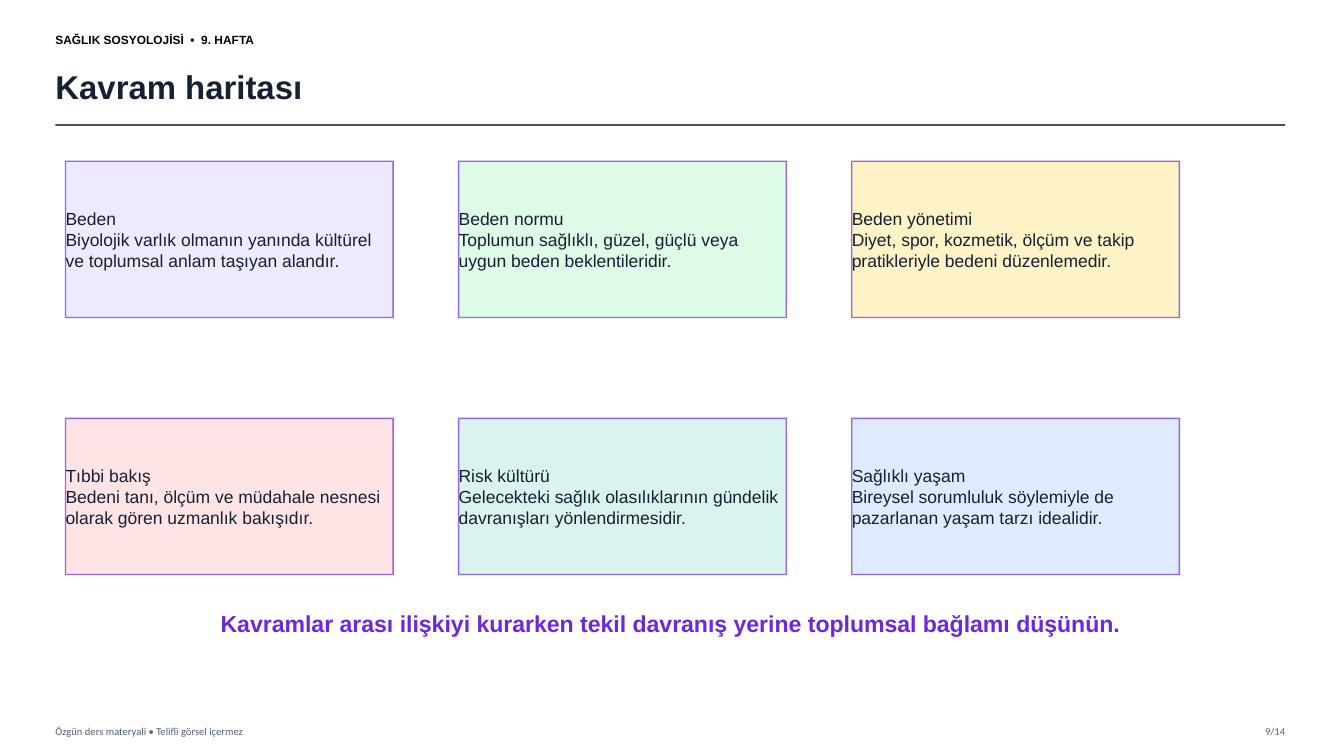
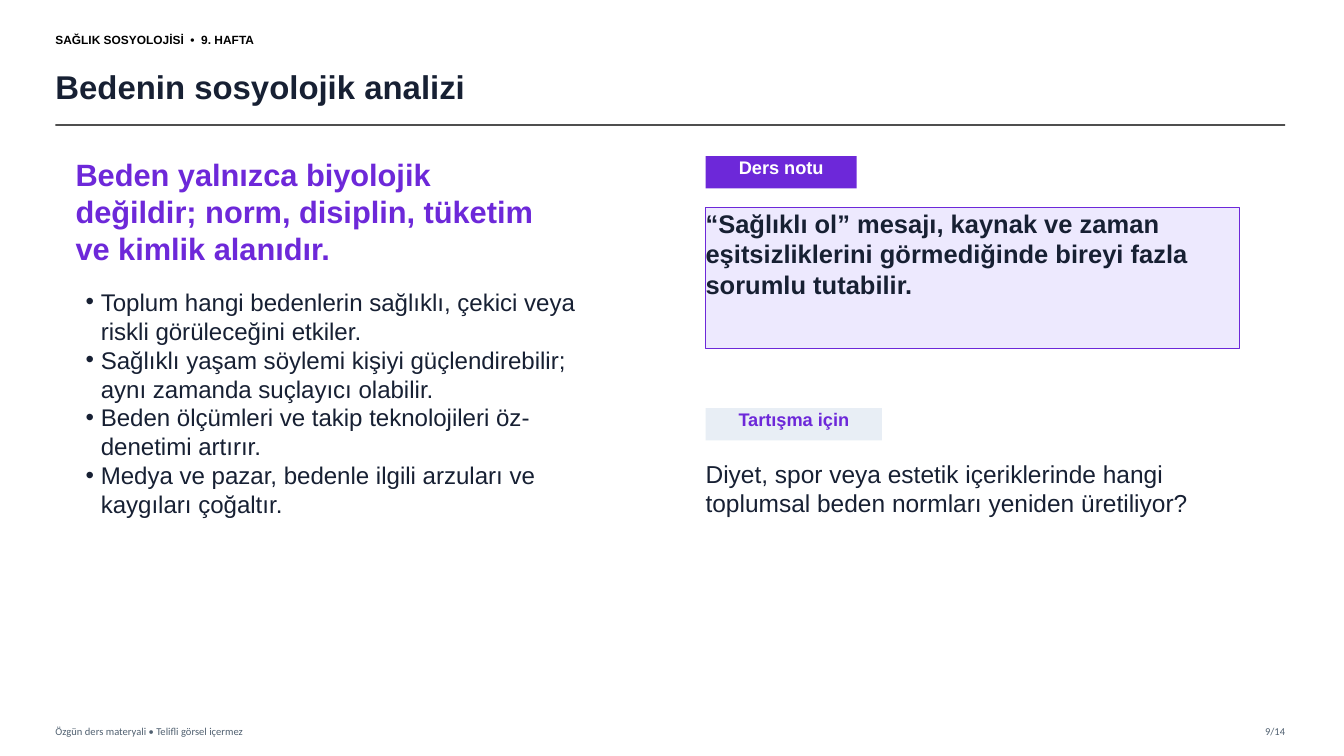
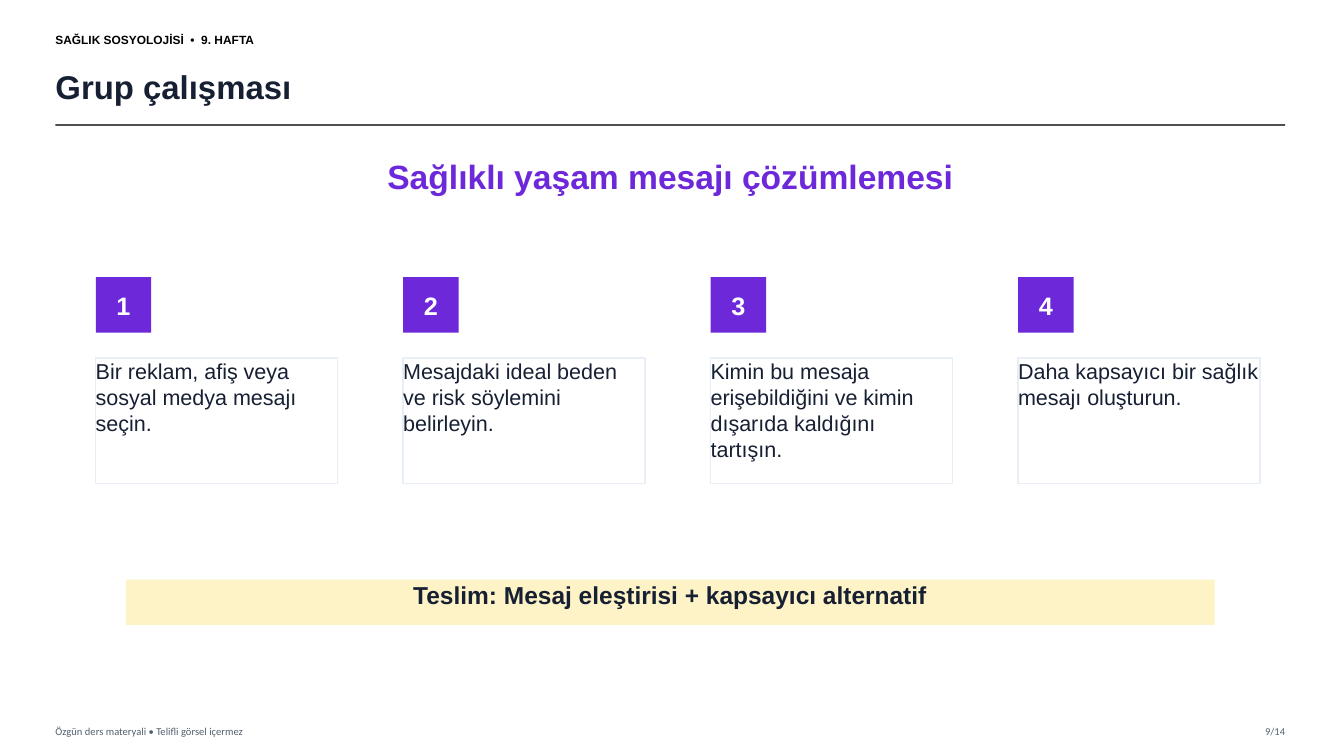
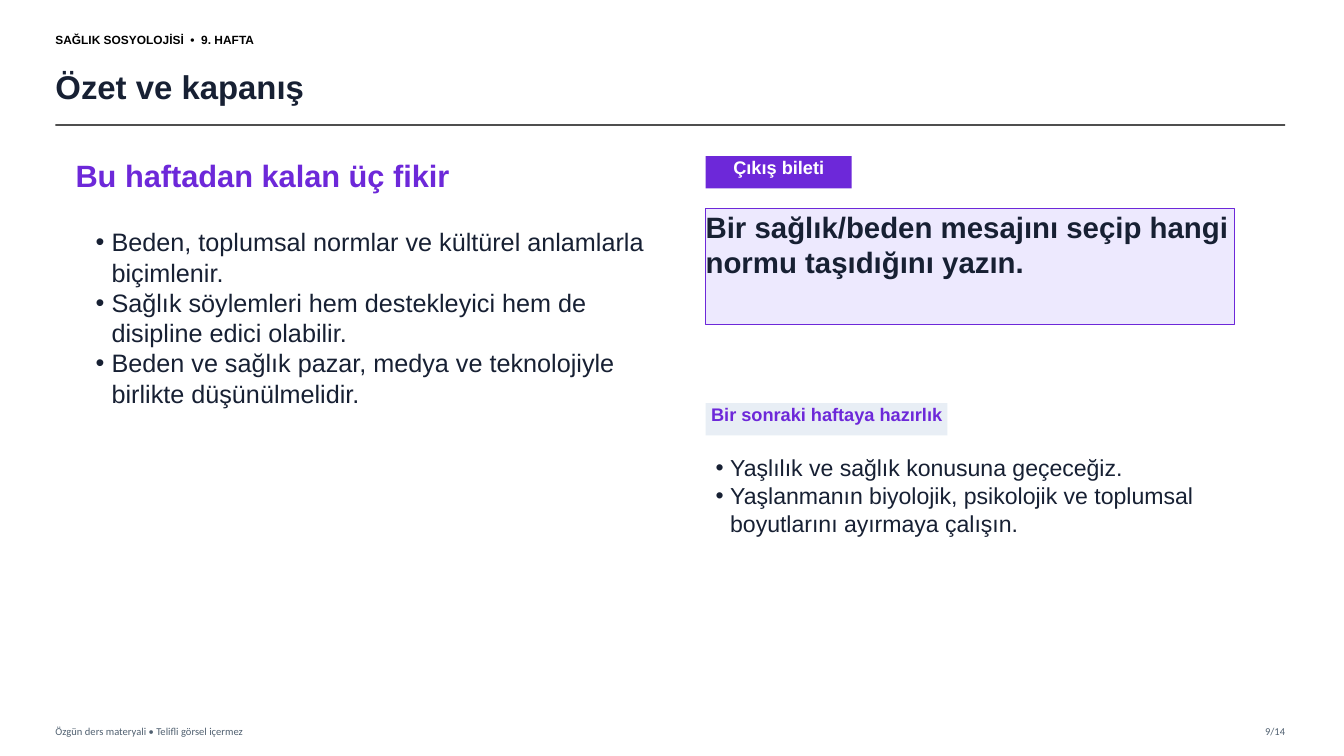
from lxml.etree import SubElement
from pptx import Presentation
from pptx.dml.color import RGBColor
from pptx.enum.shapes import MSO_CONNECTOR, MSO_SHAPE
from pptx.enum.text import MSO_ANCHOR, MSO_AUTO_SIZE, PP_ALIGN
from pptx.oxml.ns import qn
from pptx.util import Inches, Pt

CELL = Inches(0.1)
COLUMNS, ROWS = 133.33, 75
MARGIN, RIGHT_EDGE = 5.5, 127.5
SIDE_COLUMN = 70
TAG_HEIGHT = 3.2

INK, BLACK, WHITE = "172033", "000000", "FFFFFF"
VIOLET, LILAC, MIST, CREAM = "6D28D9", "EDE9FE", "E8EEF5", "FEF3C7"
RULE, SLATE = "333333", "506070"

LEFT, CENTER, RIGHT = PP_ALIGN.LEFT, PP_ALIGN.CENTER, PP_ALIGN.RIGHT
TOP, MIDDLE = MSO_ANCHOR.TOP, MSO_ANCHOR.MIDDLE


def color(hex_value):
    return RGBColor.from_string(hex_value)


def cells(*counts):
    return [round(count * CELL) for count in counts]


def style(size, ink=INK, bold=False, name="Arial", align=LEFT, anchor=TOP, bullets=False):
    return {
        "font": {"size": Pt(size), "bold": bold, "name": name},
        "ink": ink,
        "align": align,
        "anchor": anchor,
        "bullets": bullets,
    }


HEADER = style(8.5, BLACK, bold=True, anchor=MIDDLE)
TITLE = style(23.5, bold=True, anchor=MIDDLE)
FOOTER = style(7.5, SLATE, name="Calibri", anchor=MIDDLE)
PAGE = {**FOOTER, "align": RIGHT}
LEAD = style(22, VIOLET, bold=True)
TAG = style(13, WHITE, bold=True, align=CENTER)
SOFT_TAG = style(13, VIOLET, bold=True, align=CENTER)


def set_all(target, values):
    for attribute, value in values.items():
        setattr(target, attribute, value)


def add_bullet(paragraph, size):
    properties = paragraph._p.get_or_add_pPr()
    hang = round(size * 0.63)
    properties.set("marL", str(hang))
    properties.set("indent", str(-hang))
    SubElement(properties, qn("a:buFont"), typeface="Arial")
    SubElement(properties, qn("a:buChar"), char="•")


def write(shape, lines, look):
    frame = shape.text_frame
    set_all(frame, {
        "word_wrap": True,
        "auto_size": MSO_AUTO_SIZE.NONE,
        "vertical_anchor": look["anchor"],
        "margin_left": 0,
        "margin_right": 0,
        "margin_top": 0,
        "margin_bottom": 0,
    })
    for index, line in enumerate(lines):
        paragraph = frame.add_paragraph() if index else frame.paragraphs[0]
        paragraph.alignment = look["align"]
        if look["bullets"]:
            add_bullet(paragraph, look["font"]["size"])
        run = paragraph.add_run()
        run.text = line
        set_all(run.font, look["font"])
        run.font.color.rgb = color(look["ink"])


def add_text(slide, area, look, *lines):
    write(slide.shapes.add_textbox(*cells(*area)), lines, look)


def set_line(shape, hex_value, width=1, opacity=100):
    shape.line.color.rgb = color(hex_value)
    shape.line.width = Pt(width)
    if opacity < 100:
        outline = shape._element.spPr.find(qn("a:ln"))
        shade = outline.find(".//" + qn("a:srgbClr"))
        SubElement(shade, qn("a:alpha"), val=str(opacity * 1000))


def add_panel(slide, area, look, fill, *lines, border=None, opacity=100):
    panel = slide.shapes.add_shape(MSO_SHAPE.RECTANGLE, *cells(*area))
    panel.shadow.inherit = False
    panel.fill.solid()
    panel.fill.fore_color.rgb = color(fill)
    if border:
        set_line(panel, border, opacity=opacity)
    else:
        panel.line.fill.background()
    write(panel, lines, look)


def add_rule(slide, row):
    rule = slide.shapes.add_connector(
        MSO_CONNECTOR.STRAIGHT, *cells(MARGIN, row, RIGHT_EDGE, row))
    set_line(rule, RULE, 1.2, opacity=85)
    SubElement(rule._element.spPr, qn("a:effectLst"))


def add_base(deck, heading):
    slide = deck.slides.add_slide(deck.slide_layouts[5])
    title = slide.shapes.title
    set_all(title, dict(zip(("left", "top", "width", "height"),
                            cells(MARGIN, 5.8, 119.5, 5.5))))
    write(title, [heading], TITLE)
    add_text(slide, (MARGIN, 2.5, 36, 2.8), HEADER, "SAĞLIK SOSYOLOJİSİ  •  9. HAFTA")
    add_rule(slide, 12.4)
    add_text(slide, (MARGIN, 71.4, 60, 2.2), FOOTER,
             "Özgün ders materyali • Telifli görsel içermez")
    add_text(slide, (RIGHT_EDGE - 6.5, 71.4, 6.5, 2.2), PAGE, "9/14")
    return slide


def add_tag(slide, row, width, look, fill, label):
    add_panel(slide, (SIDE_COLUMN, row, width, TAG_HEIGHT), look, fill, label)


def add_concepts(deck):
    slide = add_base(deck, "Kavram haritası")
    concepts = [
        (LILAC, "Beden",
         "Biyolojik varlık olmanın yanında kültürel ve toplumsal anlam taşıyan alandır."),
        ("DCFCE7", "Beden normu",
         "Toplumun sağlıklı, güzel, güçlü veya uygun beden beklentileridir."),
        (CREAM, "Beden yönetimi",
         "Diyet, spor, kozmetik, ölçüm ve takip pratikleriyle bedeni düzenlemedir."),
        ("FFE4E6", "Tıbbi bakış",
         "Bedeni tanı, ölçüm ve müdahale nesnesi olarak gören uzmanlık bakışıdır."),
        ("D9F3EE", "Risk kültürü",
         "Gelecekteki sağlık olasılıklarının gündelik davranışları yönlendirmesidir."),
        ("DFEAFE", "Sağlıklı yaşam",
         "Bireysel sorumluluk söylemiyle de pazarlanan yaşam tarzı idealidir."),
    ]
    look = style(12.5, anchor=MIDDLE)
    for index, (fill, concept, meaning) in enumerate(concepts):
        row, column = divmod(index, 3)
        area = (6.5 + column * 39, 16 + row * 25.5, 32.5, 15.5)
        add_panel(slide, area, look, fill, concept, meaning, border=VIOLET, opacity=70)
    add_text(slide, (10, 60.5, 113, 4.5), style(16.5, VIOLET, bold=True, align=CENTER),
             "Kavramlar arası ilişkiyi kurarken tekil davranış yerine toplumsal bağlamı düşünün.")


def add_analysis(deck):
    slide = add_base(deck, "Bedenin sosyolojik analizi")
    add_text(slide, (7.5, 15.5, 46, 10), LEAD,
             "Beden yalnızca biyolojik değildir; norm, disiplin, tüketim ve kimlik alanıdır.")
    add_text(slide, (8.5, 28.5, 52.5, 27), style(17.2, bullets=True),
             "Toplum hangi bedenlerin sağlıklı, çekici veya riskli görüleceğini etkiler.",
             "Sağlıklı yaşam söylemi kişiyi güçlendirebilir; aynı zamanda suçlayıcı olabilir.",
             "Beden ölçümleri ve takip teknolojileri öz-denetimi artırır.",
             "Medya ve pazar, bedenle ilgili arzuları ve kaygıları çoğaltır.")
    add_tag(slide, 15.5, 15, TAG, VIOLET, "Ders notu")
    add_panel(slide, (SIDE_COLUMN, 20.6, 53, 14), style(18.2, bold=True), LILAC,
              "“Sağlıklı ol” mesajı, kaynak ve zaman eşitsizliklerini görmediğinde "
              "bireyi fazla sorumlu tutabilir.", border=VIOLET)
    add_tag(slide, 40.5, 17.5, SOFT_TAG, MIST, "Tartışma için")
    add_text(slide, (SIDE_COLUMN, 45.5, 53, 12.5), style(17.5),
             "Diyet, spor veya estetik içeriklerinde hangi toplumsal beden normları "
             "yeniden üretiliyor?")


def add_group_work(deck):
    slide = add_base(deck, "Grup çalışması")
    add_text(slide, (7.5, 15.5, 118, 6.5), style(24, VIOLET, bold=True, align=CENTER),
             "Sağlıklı yaşam mesajı çözümlemesi")
    steps = [
        "Bir reklam, afiş veya sosyal medya mesajı seçin.",
        "Mesajdaki ideal beden ve risk söylemini belirleyin.",
        "Kimin bu mesaja erişebildiğini ve kimin dışarıda kaldığını tartışın.",
        "Daha kapsayıcı bir sağlık mesajı oluşturun.",
    ]
    number_look = style(18, WHITE, bold=True, align=CENTER, anchor=MIDDLE)
    step_look = style(15.4)
    for index, step in enumerate(steps):
        left = 9.5 + index * 30.5
        add_panel(slide, (left, 27.5, 5.5, 5.5), number_look, VIOLET, str(index + 1))
        add_panel(slide, (left, 35.5, 24, 12.5), step_look, WHITE, step, border=MIST)
    add_panel(slide, (12.5, 57.5, 108, 4.5), style(17.5, bold=True, align=CENTER), CREAM,
              "Teslim: Mesaj eleştirisi + kapsayıcı alternatif")


def add_summary(deck):
    slide = add_base(deck, "Özet ve kapanış")
    add_text(slide, (7.5, 15.5, 54, 4.5), LEAD, "Bu haftadan kalan üç fikir")
    add_text(slide, (9.5, 22.5, 55, 24), style(18, bullets=True),
             "Beden, toplumsal normlar ve kültürel anlamlarla biçimlenir.",
             "Sağlık söylemleri hem destekleyici hem de disipline edici olabilir.",
             "Beden ve sağlık pazar, medya ve teknolojiyle birlikte düşünülmelidir.")
    add_tag(slide, 15.5, 14.5, TAG, VIOLET, "Çıkış bileti")
    add_panel(slide, (SIDE_COLUMN, 20.7, 52.5, 11.5), style(21, bold=True), LILAC,
              "Bir sağlık/beden mesajını seçip hangi normu taşıdığını yazın.", border=VIOLET)
    add_tag(slide, 40, 24, SOFT_TAG, MIST, "Bir sonraki haftaya hazırlık")
    add_text(slide, (SIDE_COLUMN + 1, 45, 52, 13.5), style(16.5, bullets=True),
             "Yaşlılık ve sağlık konusuna geçeceğiz.",
             "Yaşlanmanın biyolojik, psikolojik ve toplumsal boyutlarını ayırmaya çalışın.")


def main():
    deck = Presentation()
    deck.slide_width, deck.slide_height = cells(COLUMNS, ROWS)
    for add_slide in (add_concepts, add_analysis, add_group_work, add_summary):
        add_slide(deck)
    deck.save("out.pptx")


if __name__ == "__main__":
    main()
